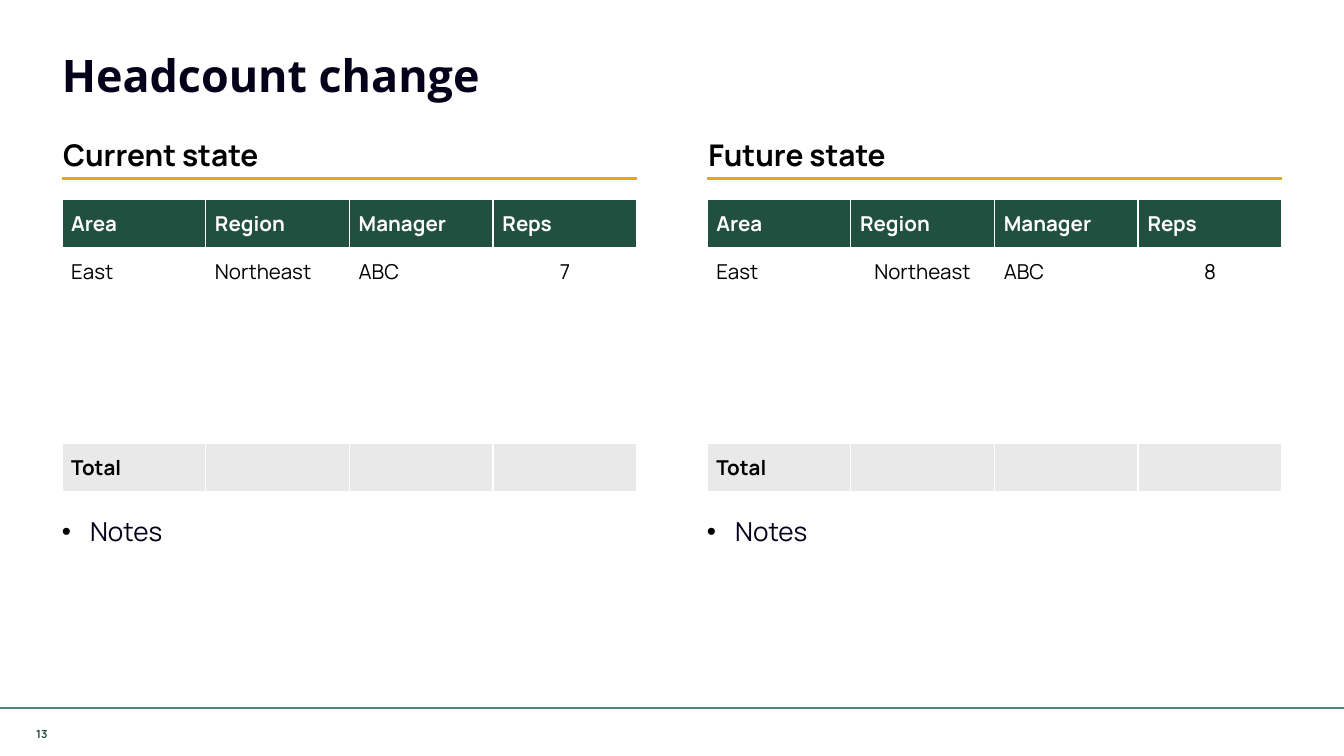
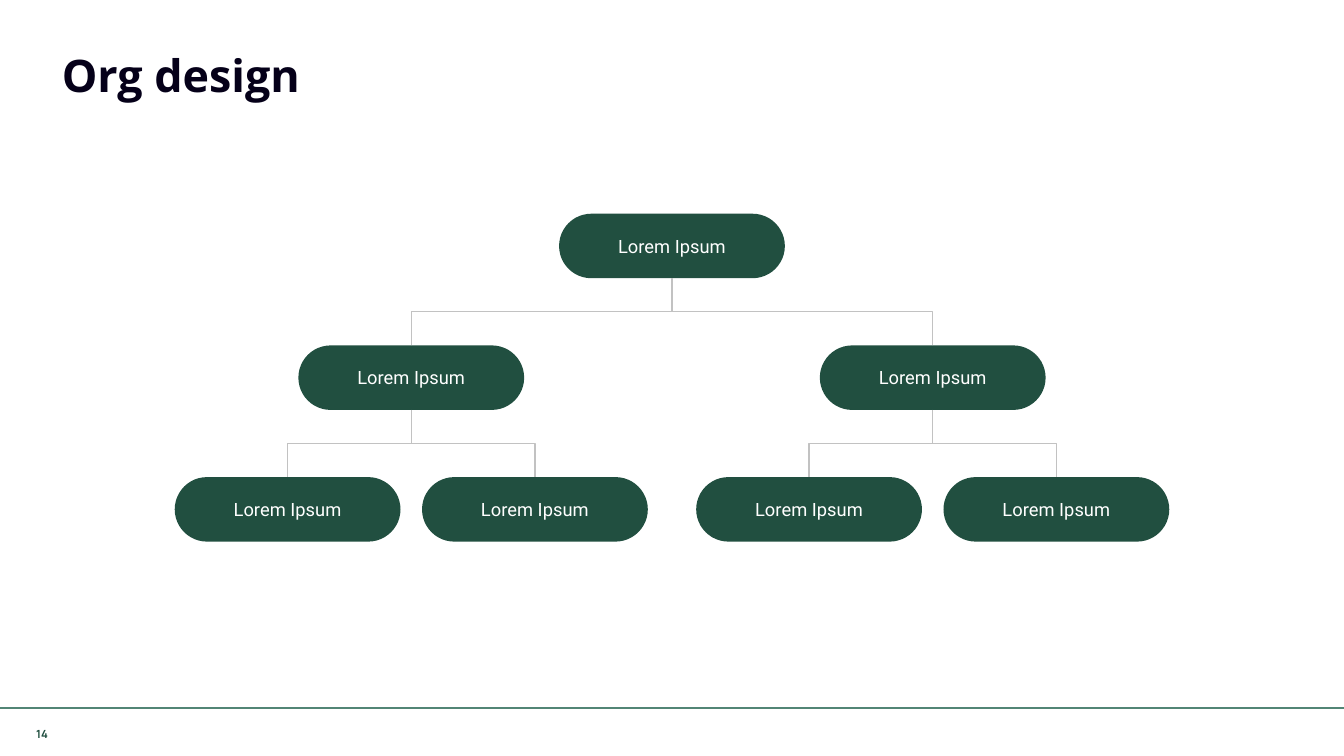
from lxml import etree
from pptx import Presentation
from pptx.dml.color import RGBColor
from pptx.enum.shapes import MSO_CONNECTOR, MSO_SHAPE
from pptx.enum.text import MSO_ANCHOR, MSO_AUTO_SIZE, PP_ALIGN
from pptx.oxml.ns import qn
from pptx.util import Inches, Pt

GREEN, RULE_GREEN, GOLD, GREY = "214F40", "528575", "E5A61A", "C2C2C2"
INK, BLACK, WHITE, TOTAL_GREY = "050019", "000000", "FFFFFF", "E9E9E9"
HEADING_FONT, TEXT_FONT, NODE_FONT = "Open Sans", "Manrope", "Roboto"
SLIDE_WIDTH = 10
SLIDE_HEIGHT = SLIDE_WIDTH * 9 / 16
TWO_CONTENT, TITLE_ONLY = 3, 5

COLUMN_HEADS = ["Area", "Region", "Manager", "Reps"]
TABLE_WIDTH, TABLE_HEIGHT, ROW_COUNT = 4.28, 2.18, 6

NODE_WIDTH, NODE_HEIGHT, LEVEL_PITCH = 1.68, 0.48, 0.98
CHILD_OFFSETS = [1.94, 0.92]


def colour(hex_string):
    """Turn a hex string into a colour."""
    return RGBColor.from_string(hex_string)


def place(item, left, top, width, height):
    """Move an item to a box given in inches."""
    item.left, item.top = Inches(left), Inches(top)
    item.width, item.height = Inches(width), Inches(height)


def write(frame, text, font, size, hex_string, bold=False, align=PP_ALIGN.LEFT):
    """Write one formatted paragraph into a text frame and return it."""
    frame.text = text
    paragraph = frame.paragraphs[0]
    paragraph.alignment = align
    paragraph.font.name, paragraph.font.size = font, Pt(size)
    paragraph.font.bold = bold
    paragraph.font.color.rgb = colour(hex_string)
    return paragraph


def set_frame(frame, across, down, anchor=MSO_ANCHOR.TOP):
    """Set the insets, anchor and wrapping of a text frame."""
    frame.auto_size = MSO_AUTO_SIZE.NONE
    frame.word_wrap = True
    frame.vertical_anchor = anchor
    frame.margin_left = frame.margin_right = Inches(across)
    frame.margin_top = frame.margin_bottom = Inches(down)


def style_line(connector, hex_string, weight):
    """Colour a connector and remove its shadow."""
    connector.line.color.rgb = colour(hex_string)
    connector.line.width = Pt(weight)
    etree.SubElement(connector._element.spPr, qn("a:effectLst"))


def add_rule(slide, left, top, width, hex_string, weight):
    """Draw a horizontal rule."""
    rule = slide.shapes.add_connector(
        MSO_CONNECTOR.STRAIGHT, Inches(left), Inches(top), Inches(left + width), Inches(top))
    style_line(rule, hex_string, weight)


def add_slide(prs, layout, title, number):
    """Add a slide with the shared title and footer."""
    slide = prs.slides.add_slide(prs.slide_layouts[layout])
    heading = slide.shapes.title
    place(heading, 0.39, 0.36, 8.62, 0.44)
    set_frame(heading.text_frame, 0.07, 0.04, MSO_ANCHOR.MIDDLE)
    write(heading.text_frame, title, HEADING_FONT, 24, INK, True).line_spacing = 0.9
    add_rule(slide, 0, 5.27, SLIDE_WIDTH, RULE_GREEN, 1)
    page = slide.shapes.add_textbox(Inches(0.23), Inches(5.37), Inches(0.17), Inches(0.18))
    set_frame(page.text_frame, 0.04, 0.04, MSO_ANCHOR.MIDDLE)
    page.text_frame.word_wrap = False
    write(page.text_frame, str(number), TEXT_FONT, 6, GREEN, True)
    return slide


def add_borders(cell):
    """Give a table cell white borders on all sides."""
    properties = cell._tc.get_or_add_tcPr()
    for side in ("lnL", "lnR", "lnT", "lnB"):
        border = etree.SubElement(properties, qn(f"a:{side}"), w=str(Pt(1)))
        fill = etree.SubElement(border, qn("a:solidFill"))
        etree.SubElement(fill, qn("a:srgbClr"), val=WHITE)


def add_headcount_table(slide, left, top, entries, centred):
    """Add a table with a header, one filled row and a total row."""
    table = slide.shapes.add_table(
        ROW_COUNT, len(COLUMN_HEADS), Inches(left), Inches(top),
        Inches(TABLE_WIDTH), Inches(TABLE_HEIGHT)).table
    table.first_row = table.horz_banding = False
    last = ROW_COUNT - 1
    texts = {0: COLUMN_HEADS, 1: entries, last: ["Total", "", "", ""]}
    fills = {0: GREEN, last: TOTAL_GREY}
    for row in range(ROW_COUNT):
        for column in range(len(COLUMN_HEADS)):
            cell = table.cell(row, column)
            text = texts.get(row, [""] * len(COLUMN_HEADS))[column]
            add_borders(cell)
            if row in fills:
                cell.fill.solid()
                cell.fill.fore_color.rgb = colour(fills[row])
            else:
                cell.fill.background()
            cell.vertical_anchor = MSO_ANCHOR.MIDDLE
            cell.margin_left = cell.margin_right = Inches(0.07)
            cell.margin_top = cell.margin_bottom = Inches(0.07 if text else 0.02)
            align = PP_ALIGN.CENTER if row == 1 and column in centred else PP_ALIGN.LEFT
            write(cell.text_frame, text, TEXT_FONT, 11,
                  WHITE if row == 0 else BLACK, row in fills, align)


def add_notes_list(notes, left, top):
    """Format a body placeholder as the bulleted notes."""
    place(notes, left, top, TABLE_WIDTH, 0.27)
    set_frame(notes.text_frame, 0, 0)
    paragraph = write(notes.text_frame, "Notes", TEXT_FONT, 14, INK)
    paragraph.line_spacing, paragraph.space_before = 1.15, Pt(0)
    properties = paragraph._p.get_or_add_pPr()
    properties.set("marL", str(Inches(0.21)))
    properties.set("indent", str(-Inches(0.21)))
    bullet_colour = etree.Element(qn("a:buClr"))
    etree.SubElement(bullet_colour, qn("a:srgbClr"), val=BLACK)
    bullet = etree.Element(qn("a:buChar"), char="•")
    defaults = properties.find(qn("a:defRPr"))
    defaults.addprevious(bullet_colour)
    defaults.addprevious(bullet)


def add_state(slide, notes, left, top, heading, entries, centred):
    """Add one state: heading, rule, table and notes."""
    label = slide.shapes.add_textbox(
        Inches(left - 0.06), Inches(top), Inches(2.39), Inches(0.53))
    set_frame(label.text_frame, 0.07, 0.07)
    write(label.text_frame, heading, TEXT_FONT, 16, BLACK, True)
    add_rule(slide, left, top + 0.38, TABLE_WIDTH, GOLD, 1.5)
    add_headcount_table(slide, left, top + 0.53, entries, centred)
    add_notes_list(notes, left, top + 2.85)


def add_headcount_slide(prs):
    """Add the comparison of current and future headcount."""
    slide = add_slide(prs, TWO_CONTENT, "Headcount change", 13)
    current_notes, future_notes = slide.placeholders[1], slide.placeholders[2]
    add_state(slide, current_notes, 0.46, 0.95, "Current state",
              ["East", "Northeast", "ABC", "7"], {3})
    add_state(slide, future_notes, 5.26, 0.95, "Future state",
              ["East", "Northeast", "ABC", "8"], {1, 3})


def add_branch(slide, parent, child, centre, bottom, offset):
    """Link a parent to a child with an elbow that leaves downwards."""
    branch = slide.shapes.add_connector(MSO_CONNECTOR.ELBOW, 0, 0, 0, 0)
    branch.begin_connect(parent, 2)
    branch.end_connect(child, 0)
    drop, span = LEVEL_PITCH - NODE_HEIGHT, abs(offset)
    middle_x, middle_y = centre + offset / 2, bottom + drop / 2
    place(branch, middle_x - drop / 2, middle_y - span / 2, drop, span)
    transform = branch._element.spPr.find(qn("a:xfrm"))
    transform.set("rot", "5400000")
    transform.set("flipH", "0")
    transform.set("flipV", "1" if offset > 0 else "0")
    style_line(branch, GREY, 0.75)


def add_org_tree(slide, centre, top, offsets):
    """Add a node and, level by level, the two branches below it."""
    node = slide.shapes.add_shape(
        MSO_SHAPE.ROUNDED_RECTANGLE, Inches(centre - NODE_WIDTH / 2), Inches(top),
        Inches(NODE_WIDTH), Inches(NODE_HEIGHT))
    node.adjustments[0] = 0.5
    node.shadow.inherit = False
    node.fill.solid()
    node.fill.fore_color.rgb = colour(GREEN)
    node.line.fill.background()
    set_frame(node.text_frame, 0.1, 0.1, MSO_ANCHOR.MIDDLE)
    write(node.text_frame, "Lorem Ipsum", NODE_FONT, 9.8, WHITE, align=PP_ALIGN.CENTER)
    for offset in (-offsets[0], offsets[0]) if offsets else ():
        child = add_org_tree(slide, centre + offset, top + LEVEL_PITCH, offsets[1:])
        add_branch(slide, node, child, centre, top + NODE_HEIGHT, offset)
    return node


def add_org_slide(prs):
    """Add the organisation chart."""
    slide = add_slide(prs, TITLE_ONLY, "Org design", 14)
    add_org_tree(slide, SLIDE_WIDTH / 2, 1.59, CHILD_OFFSETS)


def main():
    """Build and save the presentation."""
    prs = Presentation()
    prs.slide_width, prs.slide_height = Inches(SLIDE_WIDTH), Inches(SLIDE_HEIGHT)
    add_headcount_slide(prs)
    add_org_slide(prs)
    prs.save("out.pptx")


if __name__ == "__main__":
    main()
